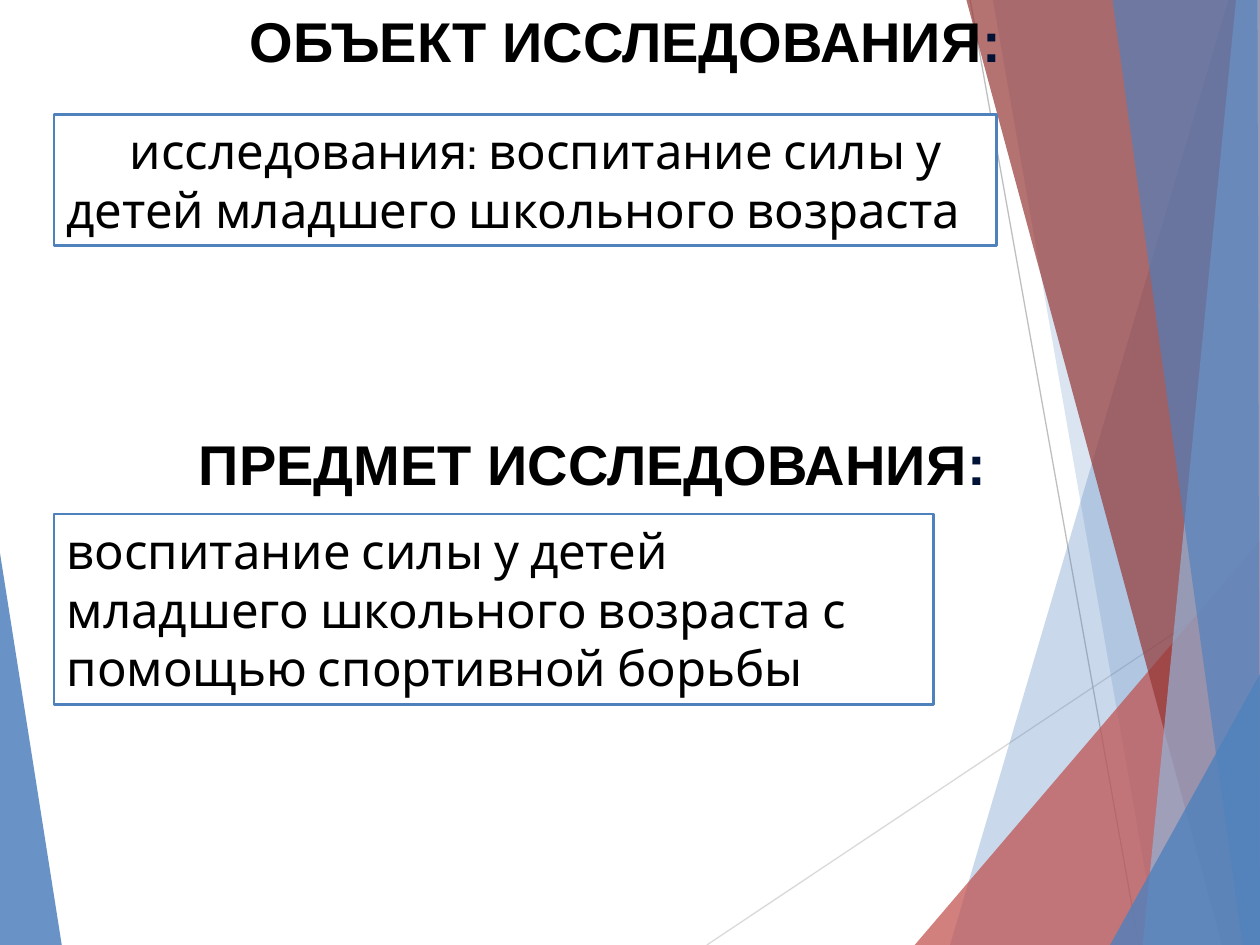
"""Build a slide naming the object and the subject of a study."""
from lxml import etree
from pptx import Presentation
from pptx.dml.color import RGBColor
from pptx.enum.shapes import MSO_CONNECTOR, MSO_SHAPE
from pptx.enum.text import MSO_ANCHOR, MSO_AUTO_SIZE, PP_ALIGN
from pptx.oxml.ns import qn
from pptx.util import Inches, Pt

LINE = MSO_CONNECTOR.STRAIGHT
RECT = MSO_SHAPE.RECTANGLE
TOP = MSO_ANCHOR.TOP
LEFT = PP_ALIGN.LEFT
GROW = MSO_AUTO_SIZE.SHAPE_TO_FIT_TEXT

BLUE = RGBColor(0x4F, 0x81, 0xBD)
PALE = RGBColor(0x95, 0xB3, 0xD7)
RED = RGBColor(0xC0, 0x50, 0x4D)
DARK = RGBColor(0x95, 0x37, 0x35)
SILVER = RGBColor(0xD9, 0xD9, 0xD9)
GRAY = RGBColor(0xBF, 0xBF, 0xBF)
WHITE = RGBColor(0xFF, 0xFF, 0xFF)
BLACK = RGBColor(0, 0, 0)
NAVY = RGBColor(0x00, 0x12, 0x36)
PLUM = RGBColor(0x5E, 0x45, 0x7C)

WIDE, HIGH = 10, 7.5
INDENT = 0.5

RAYS = [
    ((5.61, HIGH), (WIDE, 4.57), SILVER),
    ((7.7, 0), (9.04, HIGH), GRAY),
]
SHARDS = [
    (BLUE, 85, [(0, 4.39), (0.49, HIGH), (0, HIGH)]),
    (BLUE, 30, [(9.75, 0), (7.54, HIGH), (WIDE, HIGH), (WIDE, 0)]),
    (BLUE, 20, [(7.88, 0), (9.19, HIGH), (WIDE, HIGH), (WIDE, 0)]),
    (RED, 72, [(7.26, HIGH), (WIDE, 4.29), (WIDE, HIGH)]),
    (DARK, 70, [(7.67, 0), (9.7, HIGH), (WIDE, HIGH), (WIDE, 0)]),
    (PALE, 70, [(9.81, 0), (9.07, HIGH), (WIDE, HIGH), (WIDE, 0)]),
    (BLUE, 65, [(8.83, 0), (9.86, HIGH), (WIDE, HIGH), (9.98, 0)]),
    (BLUE, 80, [(8.81, HIGH), (WIDE, 5.35), (WIDE, HIGH)]),
]
BOXES = [
    ("исследования: воспитание силы у детей младшего школьного возраста",
     (0.43, 0.91, 7.48, 1.04), INDENT),
    ("воспитание силы у детей младшего школьного возраста с помощью "
     "спортивной борьбы", (0.43, 4.08, 6.98, 1.51), 0),
]
TITLE = "ОБЪЕКТ ИССЛЕДОВАНИЯ", (1.38, 0, 7.61, 0.64)
SECOND = "ПРЕДМЕТ ИССЛЕДОВАНИЯ", (0.98, 3.36, 8.43, 0.64)


def inches(nums):
    return [Inches(num) for num in nums]


def add_ray(shapes, start, end, color):
    ray = shapes.add_connector(LINE, *inches(start + end))
    ray.line.color.rgb = color
    ray.line.width = Pt(0.75)
    etree.SubElement(ray._element.spPr, qn("a:effectLst"))


def add_shard(shapes, color, alpha, points):
    first, *rest = [inches(point) for point in points]
    pen = shapes.build_freeform(*first)
    pen.add_line_segments(rest)
    shard = pen.convert_to_shape()
    shard.shadow.inherit = False
    shard.fill.solid()
    shard.fill.fore_color.rgb = color
    shard.line.fill.background()
    tint = shard._element.spPr.find(".//" + qn("a:srgbClr"))
    etree.SubElement(tint, qn("a:alpha"), val=str(alpha * 1000))


def set_frame(shape, indent):
    frame = shape.text_frame
    frame.word_wrap = True
    frame.auto_size = GROW
    frame.vertical_anchor = TOP
    para = frame.paragraphs[0]
    para.alignment = LEFT
    props = para._p.get_or_add_pPr()
    props.set("marL", "0")
    props.set("indent", str(Inches(indent)))
    return para


def add_box(shapes, text, place, indent):
    box = shapes.add_shape(RECT, *inches(place))
    box.shadow.inherit = False
    box.fill.solid()
    box.fill.fore_color.rgb = WHITE
    box.line.color.rgb = BLUE
    box.line.width = Pt(1.5)
    para = set_frame(box, indent)
    para.text = text
    para.font.name = "Cabin"
    para.font.size = Pt(28)
    para.font.color.rgb = BLACK


def add_edge(run):
    edge = etree.Element(qn("a:ln"), w=str(Pt(0.71)))
    fill = etree.SubElement(edge, qn("a:solidFill"))
    etree.SubElement(fill, qn("a:srgbClr"), val=str(PLUM))
    run.font._element.insert(0, edge)


def set_head(shape, text, place):
    shape.left, shape.top, shape.width, shape.height = inches(place)
    para = set_frame(shape, INDENT)
    para.font.name = "Arial"
    para.font.size = Pt(32)
    para.font.bold = True
    for part, color in ((text, BLACK), (":", NAVY)):
        run = para.add_run()
        run.text = part
        run.font.color.rgb = color
        add_edge(run)


def main():
    deck = Presentation()
    deck.slide_width, deck.slide_height = inches((WIDE, HIGH))
    slide = deck.slides.add_slide(deck.slide_layouts[5])
    shapes = slide.shapes
    title = shapes.title
    add_shard(shapes, *SHARDS[0])
    for ray in RAYS:
        add_ray(shapes, *ray)
    for shard in SHARDS[1:]:
        add_shard(shapes, *shard)
    for box in BOXES:
        add_box(shapes, *box)
    set_head(shapes.add_textbox(0, 0, 0, 0), *SECOND)
    set_head(title, *TITLE)
    shapes._spTree.append(title._element)
    deck.save("out.pptx")


if __name__ == "__main__":
    main()
